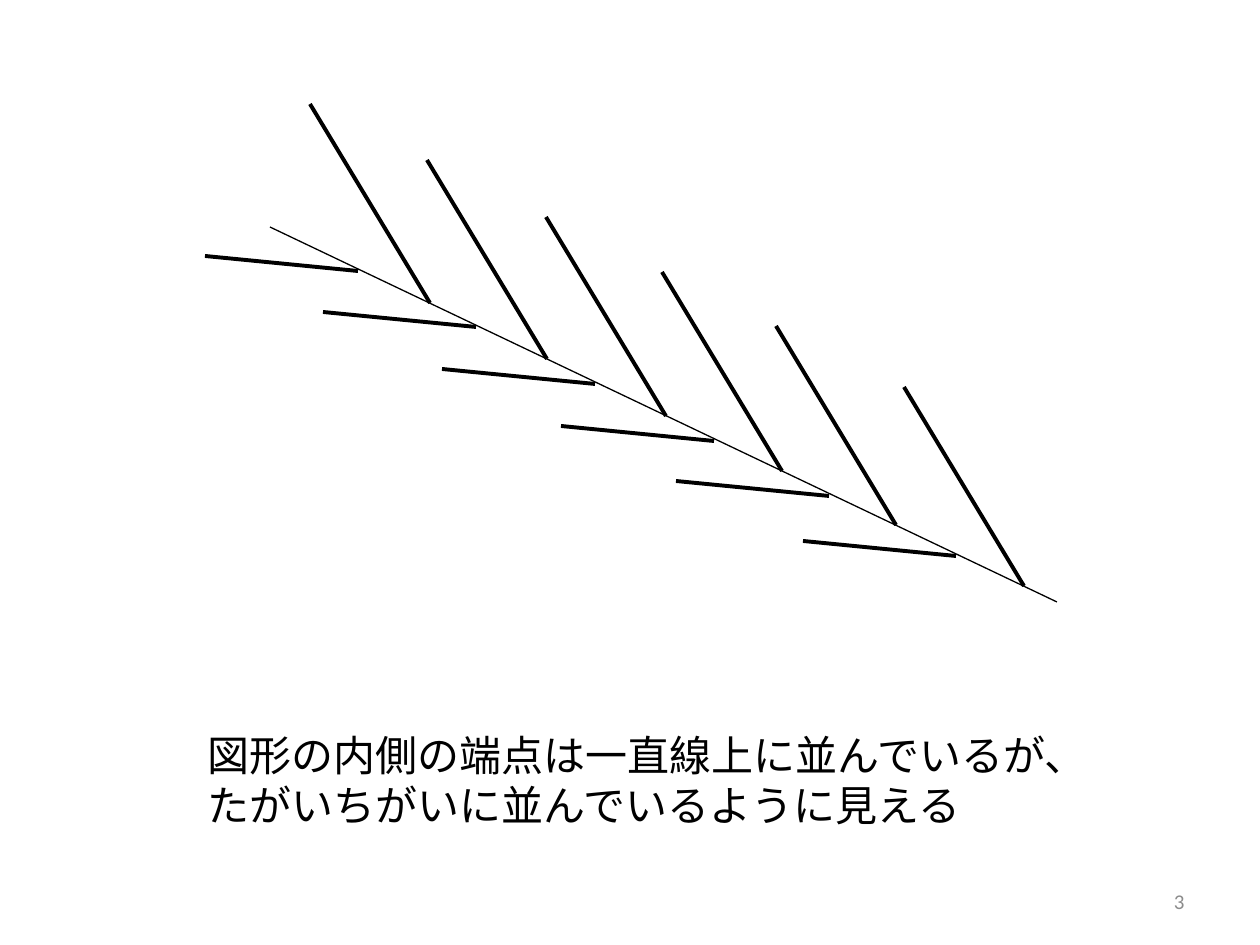
from lxml.etree import SubElement
from pptx import Presentation
from pptx.dml.color import RGBColor
from pptx.enum.shapes import MSO_CONNECTOR
from pptx.enum.text import MSO_ANCHOR, MSO_AUTO_SIZE, PP_ALIGN
from pptx.oxml.ns import qn
from pptx.util import Emu, Pt

SCALE = 914400 / 126
SLOPE = 0.477
INK, GREY = "000000", "8C8C8C"
LONG_STEPS = (0, 117, 236, 352, 466, 594)
SHORT_STEPS = (0, 118, 237, 356, 471, 598)


def px(n):
    return Emu(round(n * SCALE))


def color(code):
    return RGBColor.from_string(code)


def add_line(shapes, start, end, width):
    line = shapes.add_connector(MSO_CONNECTOR.STRAIGHT, *map(px, start + end))
    line.line.color.rgb = color(INK)
    line.line.width = Pt(width)
    SubElement(line._element.spPr, qn("a:effectLst"))


def add_row(shapes, left, top, wide, high, steps):
    """Group equal strokes, shifted by steps along the axis."""
    group = shapes.add_group_shape()
    for step in steps:
        x, y = left + step, top + round(step * SLOPE)
        add_line(group.shapes, (x, y), (x + wide, y + high), 2.25)


def add_figure(shapes, left, top):
    add_row(shapes, left + 105, top, 120, 199, LONG_STEPS)
    add_row(shapes, left, top + 152, 153, 15, SHORT_STEPS)
    add_line(shapes, (left + 852, top + 498), (left + 65, top + 123), 0.75)


def add_text(shapes, box, text, font, size, ink):
    frame = shapes.add_textbox(*map(px, box)).text_frame
    frame.word_wrap = True
    frame.text = text
    for para in frame.paragraphs:
        for run in para.runs:
            run.font.name = font
            run.font.size = Pt(size)
            run.font.color.rgb = color(ink)
            SubElement(run.font._element, qn("a:ea"), typeface=font)
    return frame


def add_caption(shapes, box):
    text = "図形の内側の端点は一直線上に並んでいるが、\nたがいちがいに並んでいるように見える"
    frame = add_text(shapes, box, text, "Noto Sans CJK JP", 24, INK)
    frame.word_wrap = False
    frame.auto_size = MSO_AUTO_SIZE.SHAPE_TO_FIT_TEXT


def add_number(shapes, box):
    frame = add_text(shapes, box, "3", "Calibri", 12, GREY)
    frame.vertical_anchor = MSO_ANCHOR.MIDDLE
    frame.paragraphs[0].alignment = PP_ALIGN.RIGHT


def main():
    deck = Presentation()
    deck.slide_width, deck.slide_height = px(1260), px(945)
    shapes = deck.slides.add_slide(deck.slide_layouts[6]).shapes
    add_caption(shapes, (195, 723, 914, 115))
    add_figure(shapes, 205, 104)
    add_number(shapes, (903, 876, 294, 50))
    deck.save("out.pptx")


if __name__ == "__main__":
    main()
